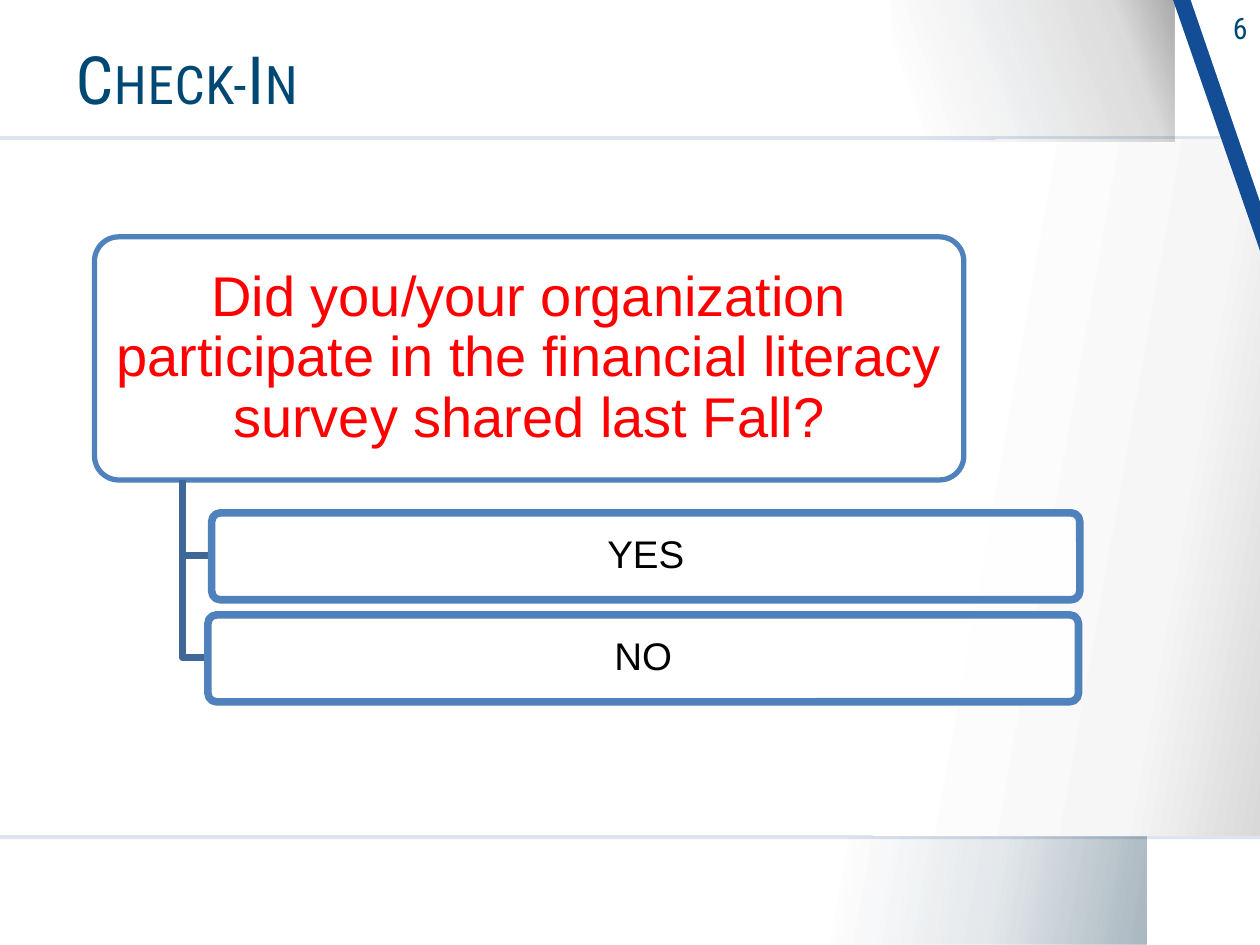
from lxml.etree import SubElement as Sub
from pptx import Presentation
from pptx.dml.color import RGBColor as RGB
from pptx.enum.shapes import MSO_SHAPE as Shape
from pptx.enum.text import MSO_ANCHOR as Anchor, MSO_AUTO_SIZE as Auto, PP_ALIGN as Align
from pptx.oxml.ns import qn
from pptx.util import Pt

UNIT = 9144


def px(n):
    return n * UNIT


def color(code):
    return RGB.from_string(code)


class Deck:
    navy, blue, deep = "004874", "4F81BD", "3F6797"
    body, head = "Arial", "Roboto Condensed"

    def __init__(self, prs):
        self.slide = prs.slides.add_slide(prs.slide_layouts[5])
        self.shapes = self.slide.shapes

    def fill(self, shape, code, alpha=100):
        shape.fill.solid()
        shape.fill.fore_color.rgb = color(code)
        if alpha < 100:
            tint = shape.element.spPr.find(qn("a:solidFill"))[0]
            Sub(tint, qn("a:alpha"), val=str(alpha * 1000))

    def fade(self, shape, stops, angle):
        shape.fill.gradient()
        grad = shape.element.spPr.find(qn("a:gradFill"))
        for node in list(grad):
            grad.remove(node)
        group = Sub(grad, qn("a:gsLst"))
        for pos, code, alpha in stops:
            stop = Sub(group, qn("a:gs"), pos=str(pos * 1000))
            tint = Sub(stop, qn("a:srgbClr"), val=code)
            if alpha < 100:
                Sub(tint, qn("a:alpha"), val=str(alpha * 1000))
        Sub(grad, qn("a:lin"), ang=str(angle * 60000), scaled="0")

    def block(self, kind, x, y, w, h):
        shape = self.shapes.add_shape(kind, px(x), px(y), px(w), px(h))
        shape.shadow.inherit = False
        shape.line.fill.background()
        return shape

    def panel(self, x, y, w, h, stops, angle):
        self.fade(self.block(Shape.RECTANGLE, x, y, w, h), stops, angle)

    def wedge(self, x, w, h, code):
        shape = self.block(Shape.ISOSCELES_TRIANGLE, x, 0, w, h)
        shape.adjustments[0] = 1
        shape.element.spPr.find(qn("a:xfrm")).set("flipV", "1")
        self.fill(shape, code)

    def stroke(self, shape, code, width):
        shape.line.color.rgb = color(code)
        shape.line.width = Pt(width)

    def label(self, shape, text, size, font, code, align, gap, pad):
        frame = shape.text_frame
        frame.word_wrap = True
        frame.auto_size = Auto.NONE
        frame.vertical_anchor = Anchor.MIDDLE
        frame.margin_left = frame.margin_right = px(pad[0])
        frame.margin_top = frame.margin_bottom = px(pad[1])
        para = frame.paragraphs[0]
        para.alignment = align
        para.line_spacing = gap
        run = para.add_run()
        run.text = text
        run.font.size = Pt(size)
        run.font.name = font
        run.font.color.rgb = color(code)

    def header(self, shape, text, size, align, gap):
        self.label(shape, text, size, self.head, self.navy, align, gap, (10, 5))
        props = next(shape.element.iter(qn("a:rPr")))
        props.set("spc", "40")
        return props

    def title(self, text, x, y, w, h):
        shape = self.shapes.title
        shape.left, shape.top, shape.width, shape.height = map(px, (x, y, w, h))
        self.header(shape, text, 38, Align.LEFT, 0.85).set("cap", "small")

    def number(self, text, x, y, w, h):
        shape = self.shapes.add_textbox(px(x), px(y), px(w), px(h))
        self.header(shape, text, 17, Align.RIGHT, 1.0)

    def card(self, text, x, y, w, h, size, code, width, pad, alpha=None):
        shape = self.block(Shape.ROUNDED_RECTANGLE, x, y, w, h)
        shape.adjustments[0] = 0.1
        if alpha is None:
            shape.fill.background()
        else:
            self.fill(shape, "FFFFFF", alpha)
        self.stroke(shape, self.blue, width)
        self.label(shape, text, size, self.body, code, Align.CENTER, 0.9, pad)

    def elbow(self, x, y, right, low):
        pen = self.shapes.build_freeform(x, y, scale=UNIT)
        pen.add_line_segments([(x, low), (right, low)], close=False)
        shape = pen.convert_to_shape()
        shape.shadow.inherit = False
        shape.fill.background()
        self.stroke(shape, self.deep, 4.33)


def main():
    prs = Presentation()
    prs.slide_width, prs.slide_height = px(1000), px(750)
    deck = Deck(prs)

    band = deck.block(Shape.RECTANGLE, 0, 108, 1000, 558)
    deck.fill(band, "275A99", 16)
    deck.panel(0, 111, 1000, 552, [(0, "FFFFFF", 100), (72, "FFFFFF", 100),
                                   (90, "F6F6F6", 100), (100, "D9D9D9", 100)], 10)
    deck.panel(643, 664, 267, 86, [(10, "002C47", 0), (56, "002C47", 11),
                                   (100, "002C47", 34)], 10)
    deck.panel(708, 0, 224, 112, [(10, "002C47", 0), (81, "000000", 14),
                                  (100, "000000", 34)], 340)
    deck.wedge(931, 69, 199, "124D95")
    deck.wedge(945, 55, 160, "FFFFFF")
    deck.number("6", 920, 2, 80, 39)
    deck.title("Check-In", 50, 24, 756, 85)

    deck.card("Did you/your organization participate in the financial literacy "
              "survey shared last Fall?", 75, 188, 690, 193, 32, "FF0000", 3, (7, 4))
    for text, x, y, w in (("YES", 168, 407, 689), ("NO", 165, 488, 691)):
        deck.elbow(145, 381, x, y + 34)
        deck.card(text, x, y, w, 69, 22, "000000", 4.33, (5, 3), 90)

    prs.save("out.pptx")


if __name__ == "__main__":
    main()
